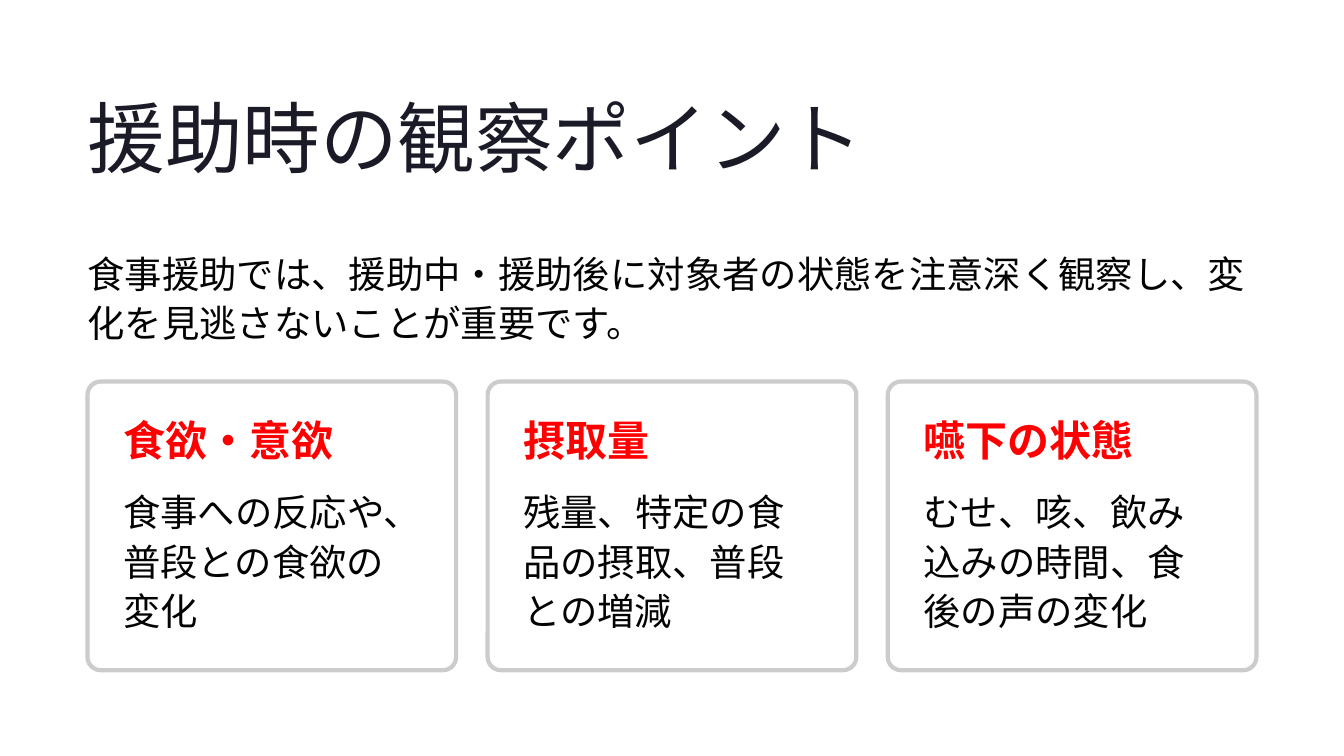
from dataclasses import dataclass

from lxml import etree
from pptx import Presentation
from pptx.dml.color import RGBColor
from pptx.enum.shapes import MSO_SHAPE
from pptx.oxml.ns import qn
from pptx.slide import Slide
from pptx.util import Pt

ROUNDED_RECTANGLE = MSO_SHAPE.ROUNDED_RECTANGLE

WHITE = RGBColor(0xFF, 0xFF, 0xFF)
NAVY = RGBColor(0x1B, 0x1B, 0x27)
BLACK = RGBColor(0x03, 0x03, 0x03)
RED = RGBColor(0xFF, 0x00, 0x00)
GREY = RGBColor(0xCC, 0xCC, 0xCC)

MARGIN = 75
CONTENT_WIDTH = 1002
CARD_TOP = 327
CARD_WIDTH = 316
CARD_HEIGHT = 247.5
CARD_PADDING = 30.5
CARD_OPACITY = 95
HEADING_TOP = 357
BODY_TOP = 415.5


@dataclass(frozen=True)
class Box:
    left: float
    top: float
    width: float
    height: float


@dataclass(frozen=True)
class TextStyle:
    font: str
    size: float
    line_spacing: float
    color: RGBColor
    bold: bool = False
    wrap: bool = True


@dataclass(frozen=True)
class Card:
    heading: str
    body: str
    body_height: float


TITLE_STYLE = TextStyle("Inter", 66.5, 83.5, NAVY, wrap=False)
HEADING_STYLE = TextStyle("Inter", 36, 41.5, RED, bold=True, wrap=False)
BODY_STYLE = TextStyle("Roboto", 32, 42.5, BLACK)

TITLE = "援助時の観察ポイント"
INTRODUCTION = (
    "食事援助では、援助中・援助後に対象者の状態を注意深く観察し、"
    "変化を見逃さないことが重要です。"
)
CARDS = [
    Card("食欲・意欲", "食事への反応や、普段との食欲の変化", 85.5),
    Card("摂取量", "残量、特定の食品の摂取、普段との増減", 85.5),
    Card("嚥下の状態", "むせ、咳、飲み込みの時間、食後の声の変化", 129),
]


def add_text(slide: Slide, text: str, box: Box, style: TextStyle) -> None:
    shape = slide.shapes.add_textbox(
        Pt(box.left), Pt(box.top), Pt(box.width), Pt(box.height)
    )
    frame = shape.text_frame
    frame.margin_left = frame.margin_top = 0
    frame.margin_right = frame.margin_bottom = 0
    frame.word_wrap = style.wrap
    frame.text = text
    paragraph = frame.paragraphs[0]
    paragraph.line_spacing = Pt(style.line_spacing)
    font = paragraph.runs[0].font
    font.name = style.font
    font.size = Pt(style.size)
    font.bold = style.bold
    font.color.rgb = style.color


def add_card_frame(slide: Slide, box: Box) -> None:
    """Draw the slightly translucent rounded outline of a card."""
    shape = slide.shapes.add_shape(
        ROUNDED_RECTANGLE, Pt(box.left), Pt(box.top), Pt(box.width), Pt(box.height)
    )
    shape.adjustments[0] = 0.046
    shape.shadow.inherit = False
    shape.fill.solid()
    shape.fill.fore_color.rgb = WHITE
    shape.line.color.rgb = GREY
    shape.line.width = Pt(3.6)
    fill_color = shape.element.spPr.find(qn("a:solidFill")).find(qn("a:srgbClr"))
    etree.SubElement(fill_color, qn("a:alpha"), val=str(CARD_OPACITY * 1000))


def add_card(slide: Slide, card: Card, left: float) -> None:
    text_left = left + CARD_PADDING
    text_width = CARD_WIDTH - 2 * CARD_PADDING
    heading_box = Box(text_left, HEADING_TOP, text_width, 41.5)
    body_box = Box(text_left, BODY_TOP, text_width, card.body_height)
    add_card_frame(slide, Box(left, CARD_TOP, CARD_WIDTH, CARD_HEIGHT))
    add_text(slide, card.heading, heading_box, HEADING_STYLE)
    add_text(slide, card.body, body_box, BODY_STYLE)


def main() -> None:
    presentation = Presentation()
    presentation.slide_width = Pt(1152)
    presentation.slide_height = Pt(648)
    slide = presentation.slides.add_slide(presentation.slide_layouts[6])

    add_text(slide, TITLE, Box(MARGIN, 73.5, 669.5, 83.5), TITLE_STYLE)
    add_text(slide, INTRODUCTION, Box(MARGIN, 211, CONTENT_WIDTH, 85.5), BODY_STYLE)

    card_pitch = (CONTENT_WIDTH - CARD_WIDTH) / (len(CARDS) - 1)
    for index, card in enumerate(CARDS):
        add_card(slide, card, MARGIN + index * card_pitch)

    presentation.save("out.pptx")


if __name__ == "__main__":
    main()
